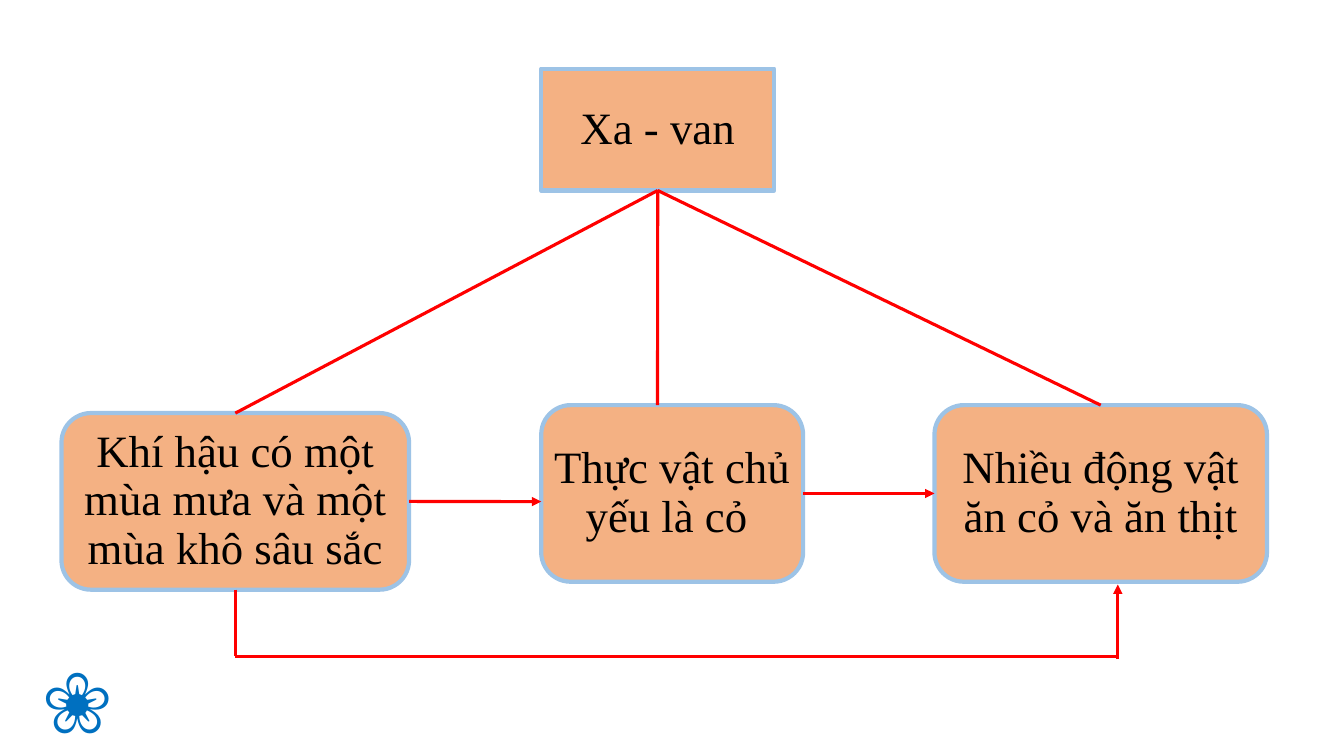
from lxml import etree
from pptx import Presentation
from pptx import util as u
from pptx.dml.color import RGBColor
from pptx.enum import shapes, text
from pptx.oxml.ns import qn

FONT = "Times New Roman"


def paint(target, color):
    if hasattr(target, "solid"):
        target.solid()
        target = target.fore_color
    target.rgb = RGBColor.from_string(color)


def format_box(box, wording):
    paint(box.fill, "F4B183")
    paint(box.line.color, "9DC3E6")
    box.line.width = u.Pt(3)
    frame = box.text_frame
    frame.text = wording
    frame.word_wrap = True
    frame.auto_size = text.MSO_AUTO_SIZE.NONE
    frame.vertical_anchor = text.MSO_ANCHOR.MIDDLE
    frame.margin_left = frame.margin_right = 0
    para = frame.paragraphs[0]
    para.alignment = text.PP_ALIGN.CENTER
    para.line_spacing = 0.9
    para.space_before = u.Pt(0)
    properties = para._p.get_or_add_pPr()
    properties.set("marL", "0")
    properties.set("indent", "0")
    etree.SubElement(properties, qn("a:buNone"))
    para.font.name = FONT
    para.font.size = u.Pt(32)
    paint(para.font.color, "000000")


deck = Presentation()
deck.slide_width, deck.slide_height = u.Cm(33.87), u.Cm(19.05)
page = deck.slides.add_slide(deck.slide_layouts[1])
title = page.shapes.title
title.element.getparent().remove(title.element)

savanna = page.placeholders[1]
savanna.left, savanna.top = u.Cm(13.64), u.Cm(1.73)
savanna.width, savanna.height = u.Cm(5.87), u.Cm(3.07)
format_box(savanna, "Xa - van")

features = []
for left, top, width, wording in [
    (1.55, 10.41, 8.76, "Khí hậu có một mùa mưa và một mùa khô sâu sắc"),
    (13.64, 10.21, 6.6, "Thực vật chủ yếu là cỏ "),
    (23.55, 10.21, 8.38, "Nhiều động vật ăn cỏ và ăn thịt"),
]:
    box = page.shapes.add_shape(
        shapes.MSO_SHAPE.ROUNDED_RECTANGLE,
        u.Cm(left), u.Cm(top), u.Cm(width), u.Cm(4.45),
    )
    box.shadow.inherit = False
    format_box(box, wording)
    features.append(box)
climate, plants, animals = features

TOP, LEFT, BOTTOM, RIGHT = range(4)
for start, end, begin_joint, end_joint, arrow in [
    ((16.57, 4.8), (5.93, 10.41), (savanna, BOTTOM), (climate, TOP), False),
    ((16.57, 4.8), (16.57, 10.21), (savanna, BOTTOM), None, False),
    ((16.57, 4.8), (27.74, 10.21), (savanna, BOTTOM), (animals, TOP), False),
    ((5.93, 14.86), (5.93, 16.54), (climate, BOTTOM), None, False),
    ((5.93, 16.54), (28.17, 16.54), None, None, False),
    ((28.17, 16.61), (28.17, 14.73), None, None, True),
    ((10.31, 12.64), (13.64, 12.64), (climate, RIGHT), None, True),
    ((20.24, 12.44), (23.55, 12.44), (plants, RIGHT), (animals, LEFT), True),
]:
    link = page.shapes.add_connector(
        shapes.MSO_CONNECTOR.STRAIGHT, *map(u.Cm, start + end)
    )
    if begin_joint:
        link.begin_connect(*begin_joint)
    if end_joint:
        link.end_connect(*end_joint)
    paint(link.line.color, "FF0000")
    link.line.width = u.Pt(2.25)
    if arrow:
        etree.SubElement(link.line._get_or_add_ln(), qn("a:tailEnd"), type="triangle")
    etree.SubElement(link._element.spPr, qn("a:effectLst"))

flower = page.shapes.add_textbox(u.Cm(0.84), u.Cm(16.21), u.Cm(2.41), u.Cm(2.82))
flower.text_frame.text = "❀"
flower.text_frame.word_wrap = False
flower.text_frame.auto_size = text.MSO_AUTO_SIZE.SHAPE_TO_FIT_TEXT
para = flower.text_frame.paragraphs[0]
para.font.name = FONT
para.font.size = u.Pt(60)
paint(para.font.color, "0070C0")

deck.save("out.pptx")
